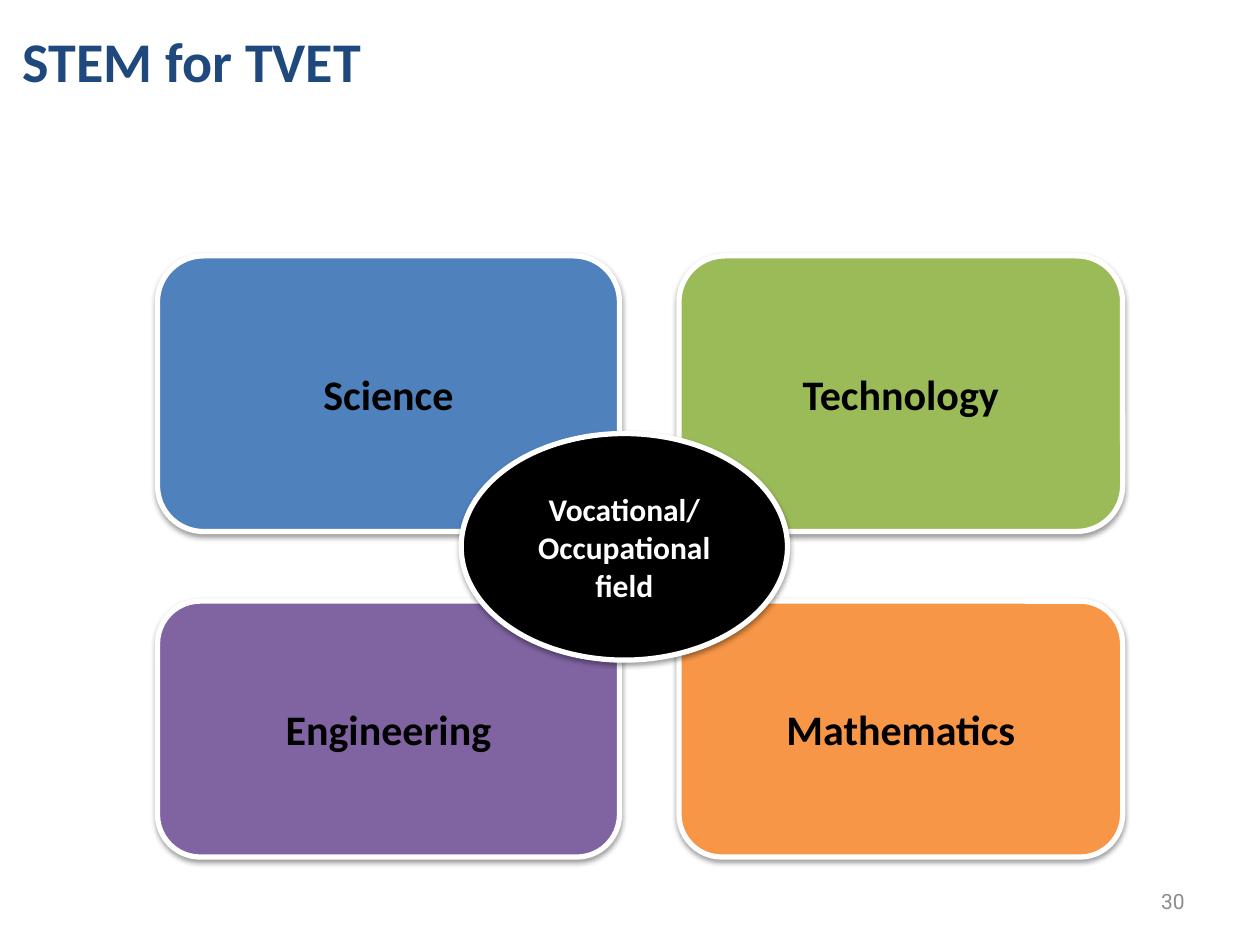
from lxml import etree
from pptx import Presentation, util as u
from pptx.dml.color import RGBColor
from pptx.enum import shapes, text
from pptx.oxml import ns


def color(hex_code):
    return RGBColor.from_string(hex_code)


class StemSlide:
    """Holds the slide and its style, and draws each kind of element on it."""

    font = "Calibri"
    white, black = "FFFFFF", "000000"

    def __init__(self, slide):
        self.slide = slide

    def add_lines(self, frame, lines, size, ink, align, bold=True, font=None):
        paragraph = frame.paragraphs[0]
        paragraph.alignment = align
        for index, line in enumerate(lines):
            if index:
                paragraph.add_line_break()
            run = paragraph.add_run()
            run.text = line
            run.font.name = font or self.font
            run.font.size = u.Pt(size)
            run.font.bold = bold
            run.font.color.rgb = color(ink)

    def label(self, box, line, size, ink, align, anchor, wrap=True, **style):
        frame = self.slide.shapes.add_textbox(*map(u.Pt, box)).text_frame
        frame.word_wrap = wrap
        frame.vertical_anchor = anchor
        self.add_lines(frame, [line], size, ink, align, **style)

    def cast_shadow(self, panel):
        panel.shadow.inherit = False
        effects = panel._element.spPr.find(ns.qn("a:effectLst"))
        shadow = etree.SubElement(
            effects, ns.qn("a:outerShdw"), blurRad=str(u.Pt(3.15)),
            dist=str(u.Pt(1.57)), dir="5400000", rotWithShape="0")
        tint = etree.SubElement(shadow, ns.qn("a:srgbClr"), val=self.black)
        etree.SubElement(tint, ns.qn("a:alpha"), val="38000")

    def panel(self, kind, box, fill, lines, size, ink):
        panel = self.slide.shapes.add_shape(kind, *map(u.Pt, box))
        panel.fill.solid()
        panel.fill.fore_color.rgb = color(fill)
        panel.line.color.rgb = color(self.white)
        panel.line.width = u.Pt(3)
        self.cast_shadow(panel)
        panel.text_frame.word_wrap = True
        panel.text_frame.vertical_anchor = text.MSO_ANCHOR.MIDDLE
        self.add_lines(panel.text_frame, lines, size, ink, text.PP_ALIGN.CENTER)


def main():
    deck = Presentation()
    deck.slide_width, deck.slide_height = u.Pt(720), u.Pt(540)
    stem = StemSlide(deck.slides.add_slide(deck.slide_layouts[6]))

    stem.label((516, 500.5, 168, 28.75), "30", 12, "8C8C8C",
               text.PP_ALIGN.RIGHT, text.MSO_ANCHOR.MIDDLE,
               bold=False, font="Roboto")

    columns = [(90, 264), (388, 253.5)]
    rows = [(146.25, 157.5), (343.5, 146.25)]
    subjects = [
        ("Science", "4F81BD", 0, 0),
        ("Engineering", "8064A2", 0, 1),
        ("Mathematics", "F79646", 1, 1),
        ("Technology", "9BBB59", 1, 0),
    ]
    for subject, fill, column, row in subjects:
        left, width = columns[column]
        top, height = rows[row]
        stem.panel(shapes.MSO_SHAPE.ROUNDED_RECTANGLE,
                   (left, top, width, height), fill, [subject], 24, stem.black)

    stem.panel(shapes.MSO_SHAPE.OVAL, (263.5, 247.75, 186.5, 129.5), stem.black,
               ["Vocational/", "Occupational field"], 18, stem.white)

    stem.label((6, 11.5, 209.5, 46), "STEM for TVET", 32, "1F497D",
               text.PP_ALIGN.LEFT, text.MSO_ANCHOR.TOP, wrap=False)
    deck.save("out.pptx")


if __name__ == "__main__":
    main()
